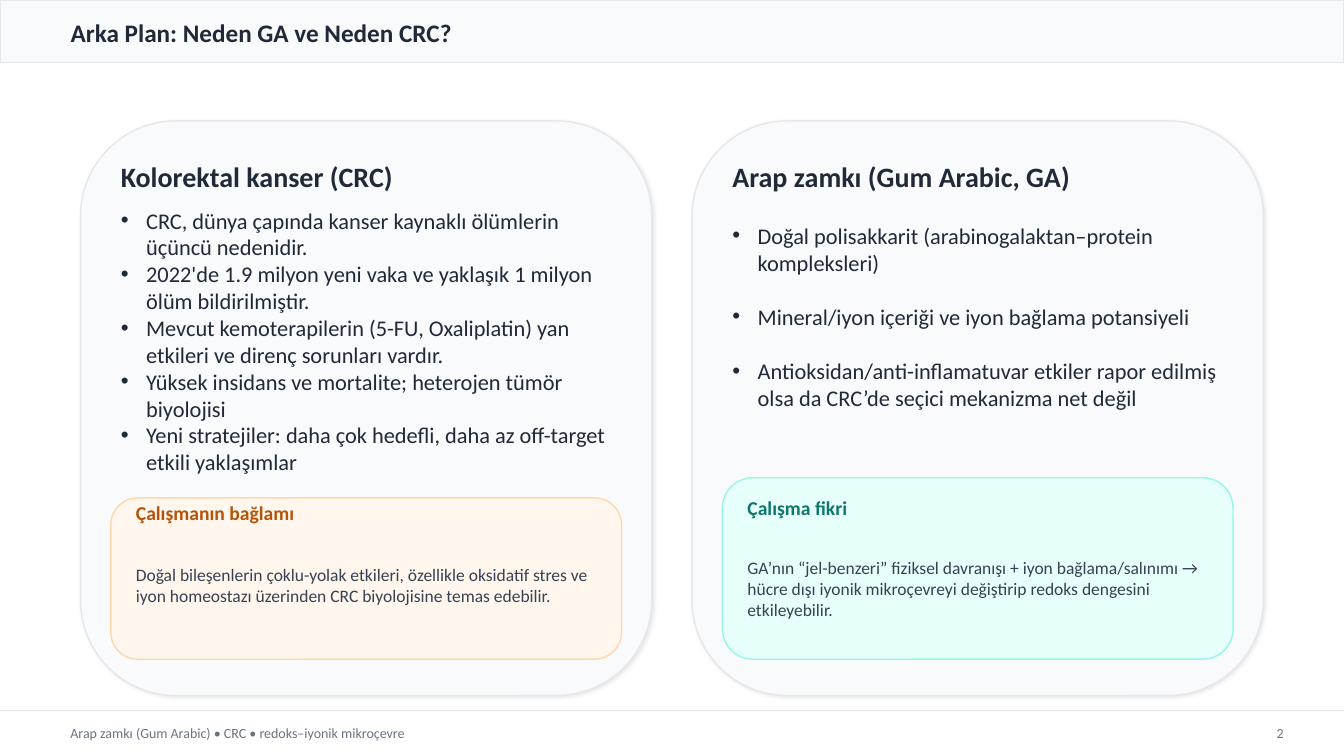
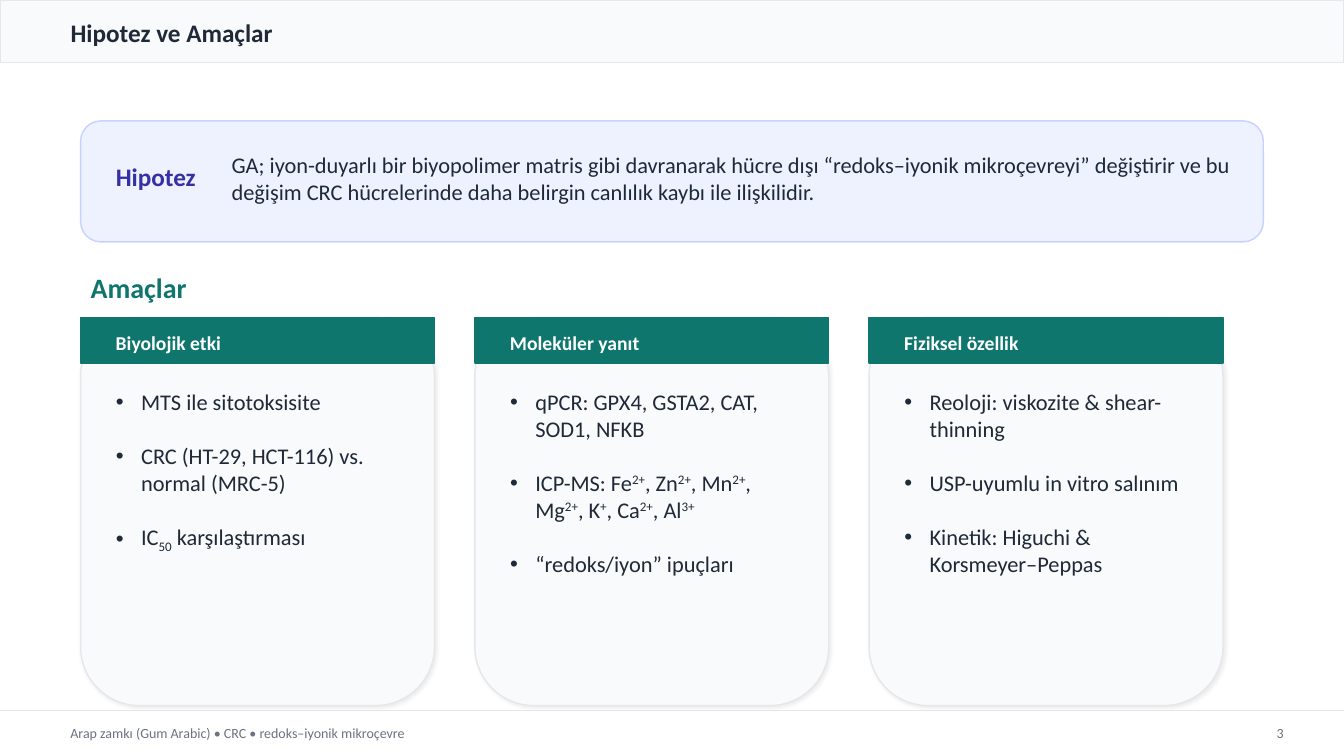
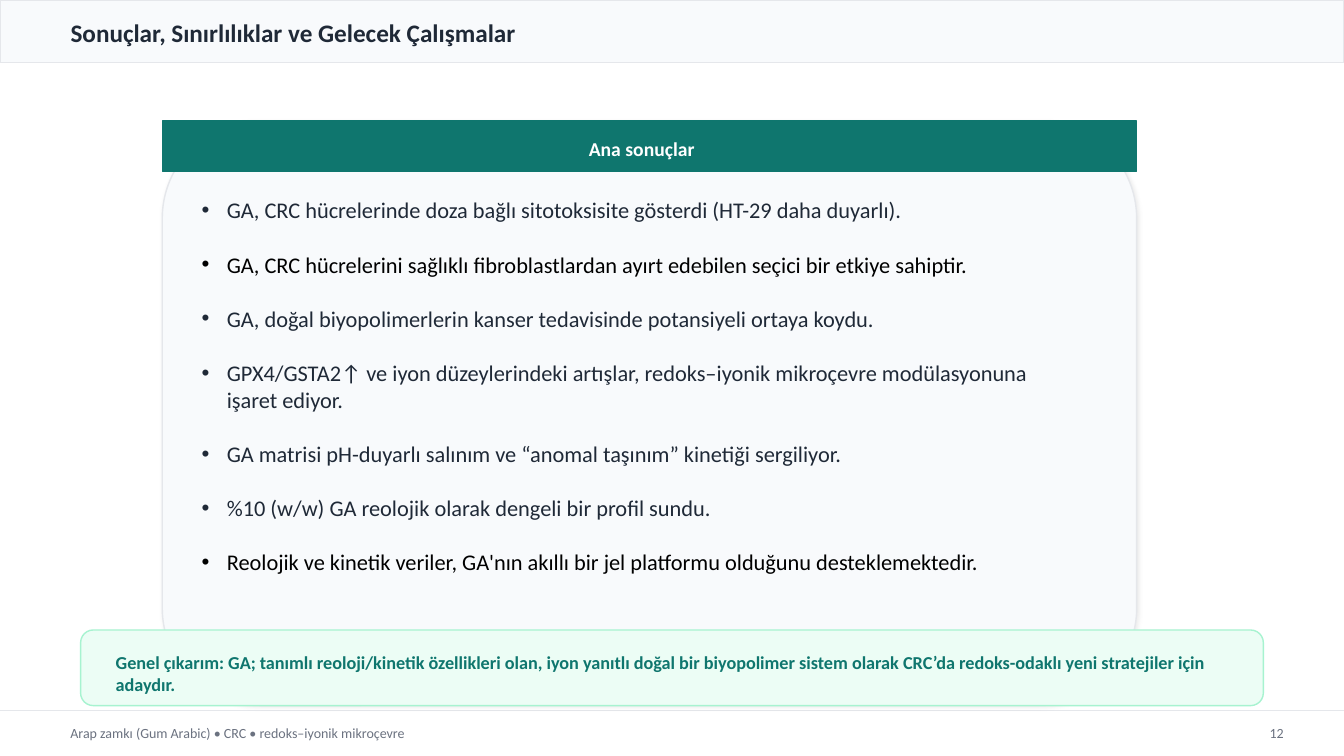
import lxml.etree
import pptx
import pptx.dml.color
import pptx.enum.shapes
import pptx.enum.text
import pptx.oxml.ns
import pptx.util

rgb = pptx.dml.color.RGBColor.from_string
qn = pptx.oxml.ns.qn
ALIGN = pptx.enum.text.PP_ALIGN
ANCHOR = pptx.enum.text.MSO_ANCHOR
SHAPE = pptx.enum.shapes.MSO_SHAPE

INK, MUTED, SLATE = "1F2937", "6B7280", "374151"
PALE, RULE, TEAL, WHITE = "F8FAFC", "E5E7EB", "0F766E", "FFFFFF"
LINE_GAP = 19.5

deck = pptx.Presentation()
deck.slide_width = pptx.util.Inches(13.33)
deck.slide_height = pptx.util.Inches(7.5)
COL = deck.slide_width / 800
ROW = deck.slide_height / 150


def panel(slide, cells, fill, line, outline=SHAPE.ROUNDED_RECTANGLE, shade=None):
    x, y, w, h = cells
    box = slide.shapes.add_shape(outline, int(x * COL), int(y * ROW), int(w * COL), int(h * ROW))
    box.fill.solid()
    box.fill.fore_color.rgb = rgb(fill)
    box.line.color.rgb = rgb(line)
    box.line.width = pptx.util.Pt(1)
    box.shadow.inherit = False
    if shade:
        opacity, distance = shade
        effects = box._element.spPr.find(qn("a:effectLst"))
        shadow = lxml.etree.SubElement(
            effects, qn("a:outerShdw"), blurRad=str(pptx.util.Pt(3)),
            dist=str(pptx.util.Pt(distance)), dir="2700000", algn="bl", rotWithShape="0")
        black = lxml.etree.SubElement(shadow, qn("a:srgbClr"), val="000000")
        lxml.etree.SubElement(black, qn("a:alpha"), val=str(opacity * 1000))


def write(slide, cells, lines, size, color, bold=False, align=ALIGN.LEFT,
          anchor=ANCHOR.MIDDLE, holder=None, bullets=False, gap=0):
    x, y, w, h = cells
    if holder is None:
        holder = slide.shapes.add_textbox(0, 0, 0, 0)
    slide.shapes._spTree.append(holder._element)
    holder.left, holder.top = int(x * COL), int(y * ROW)
    holder.width, holder.height = int(w * COL), int(h * ROW)
    frame = holder.text_frame
    frame.word_wrap = True
    frame.auto_size = pptx.enum.text.MSO_AUTO_SIZE.NONE
    frame.vertical_anchor = anchor
    for i, text in enumerate(lines):
        paragraph = frame.add_paragraph() if i else frame.paragraphs[0]
        for piece in text.split("|"):
            run = paragraph.add_run()
            run.text = piece.lstrip("^_")
            if piece[0] in "^_":
                run.font._element.set("baseline", "30000" if piece[0] == "^" else "-25000")
        paragraph.alignment = align
        paragraph.space_before = pptx.util.Pt(gap if i else 0)
        if bullets:
            properties = paragraph._p.get_or_add_pPr()
            properties.set("marL", str(pptx.util.Inches(0.25)))
            properties.set("indent", str(-pptx.util.Inches(0.25)))
            lxml.etree.SubElement(properties, qn("a:buChar"), char="•")
        paragraph.font.name = "Calibri"
        paragraph.font.size = pptx.util.Pt(size)
        paragraph.font.bold = bold
        paragraph.font.color.rgb = rgb(color)
    return frame


slides = []
for title, number, layout in [
    ("Arka Plan: Neden GA ve Neden CRC?", "2", 3),
    ("Hipotez ve Amaçlar", "3", 4),
    ("Sonuçlar, Sınırlılıklar ve Gelecek Çalışmalar", "12", 1),
]:
    slide = deck.slides.add_slide(deck.slide_layouts[layout])
    slides.append(slide)
    panel(slide, (0, 0, 800, 12.4), PALE, RULE, SHAPE.RECTANGLE)
    write(slide, (36, 2.4, 728, 8), [title], 18, INK, bold=True, holder=slide.shapes.title)
    footer_y = int(141 * ROW)
    footer_rule = slide.shapes.add_connector(
        pptx.enum.shapes.MSO_CONNECTOR.STRAIGHT, 0, footer_y, deck.slide_width, footer_y)
    footer_rule.line.color.rgb = rgb(RULE)
    footer_rule.line.width = pptx.util.Pt(1)
    lxml.etree.SubElement(footer_rule._element.spPr, qn("a:effectLst"))
    write(slide, (36, 142.4, 704, 6),
          ["Arap zamkı (Gum Arabic) • CRC • redoks–iyonik mikroçevre"], 10, MUTED)
    write(slide, (746, 142.4, 24, 6), [number], 10, MUTED, align=ALIGN.RIGHT)

background, aims, conclusions = slides

topics = [
    {
        "heading": "Kolorektal kanser (CRC)",
        "points": [
            "CRC, dünya çapında kanser kaynaklı ölümlerin üçüncü nedenidir.",
            "2022'de 1.9 milyon yeni vaka ve yaklaşık 1 milyon ölüm bildirilmiştir.",
            "Mevcut kemoterapilerin (5-FU, Oxaliplatin) yan etkileri ve direnç sorunları vardır.",
            "Yüksek insidans ve mortalite; heterojen tümör biyolojisi",
            "Yeni stratejiler: daha çok hedefli, daha az off-target etkili yaklaşımlar",
        ],
        "points_rows": (40, 40), "gap": 0,
        "note": "Çalışmanın bağlamı",
        "detail": "Doğal bileşenlerin çoklu-yolak etkileri, özellikle oksidatif stres ve "
                  "iyon homeostazı üzerinden CRC biyolojisine temas edebilir.",
        "note_rows": (98.8, 32), "label_row": 98.8, "detail_rows": (102, 28),
        "colors": ("FFF7ED", "FED7AA", "B45309"),
    },
    {
        "heading": "Arap zamkı (Gum Arabic, GA)",
        "points": [
            "Doğal polisakkarit (arabinogalaktan–protein kompleksleri)",
            "Mineral/iyon içeriği ve iyon bağlama potansiyeli",
            "Antioksidan/anti-inflamatuvar etkiler rapor edilmiş olsa da CRC’de seçici "
            "mekanizma net değil",
        ],
        "points_rows": (43, 45), "gap": LINE_GAP,
        "note": "Çalışma fikri",
        "detail": "GA’nın “jel-benzeri” fiziksel davranışı + iyon bağlama/salınımı → hücre dışı "
                  "iyonik mikroçevreyi değiştirip redoks dengesini etkileyebilir.",
        "note_rows": (94.8, 36), "label_row": 97.8, "detail_rows": (104.8, 24),
        "colors": ("E6FFFB", "99F6E4", TEAL),
    },
]
for i, topic in enumerate(topics):
    x = 48 + i * (340 + 24)
    fill, edge, accent = topic["colors"]
    top, height = topic["points_rows"]
    panel(background, (x, 24, 340, 114), PALE, RULE, shade=(10, 1.5))
    write(background, (x + 18, 31, 304, 8), [topic["heading"]], 20, INK, bold=True)
    write(background, (x + 18, top, 304, height), topic["points"], 16, INK, anchor=ANCHOR.TOP,
          holder=background.placeholders[i + 1], bullets=True, gap=topic["gap"])
    top, height = topic["note_rows"]
    panel(background, (x + 18, top, 304, height), fill, edge)
    write(background, (x + 27, topic["label_row"], 286, 6), [topic["note"]], 14, accent, bold=True)
    top, height = topic["detail_rows"]
    write(background, (x + 27, top, 286, height), [topic["detail"]], 12.5, SLATE)

panel(aims, (48, 24, 704, 24), "EEF2FF", "C7D2FE")
write(aims, (63, 31, 120, 8), ["Hipotez"], 18, "3730A3", bold=True)
write(aims, (132, 26.4, 620, 18), [
    "GA; iyon-duyarlı bir biyopolimer matris gibi davranarak hücre dışı “redoks–iyonik "
    "mikroçevreyi” değiştirir ve bu değişim CRC hücrelerinde daha belirgin canlılık kaybı ile "
    "ilişkilidir."], 16, INK)
write(aims, (48, 53, 704, 8), ["Amaçlar"], 20, TEAL, bold=True)

aim_width = (704 - 3 * 24) / 3
aim_lists = list(aims.placeholders)[1:4]
for i, (heading, points) in enumerate([
    ("Biyolojik etki", [
        "MTS ile sitotoksisite",
        "CRC (HT-29, HCT-116) vs. normal (MRC-5)",
        "IC|_50| karşılaştırması"]),
    ("Moleküler yanıt", [
        "qPCR: GPX4, GSTA2, CAT, SOD1, NFKB",
        "ICP-MS: Fe|^2+|, Zn|^2+|, Mn|^2+|, Mg|^2+|, K|^+|, Ca|^2+|, Al|^3+",
        "“redoks/iyon” ipuçları"]),
    ("Fiziksel özellik", [
        "Reoloji: viskozite & shear-thinning",
        "USP-uyumlu in vitro salınım",
        "Kinetik: Higuchi & Korsmeyer–Peppas"]),
]):
    x = 48 + i * (aim_width + 24)
    panel(aims, (x, 63, aim_width, 77), PALE, RULE, shade=(8, 1.2))
    panel(aims, (x, 63, aim_width, 9), TEAL, TEAL, SHAPE.RECTANGLE)
    write(aims, (x + 15, 65, aim_width - 30, 6), [heading], 14, WHITE, bold=True)
    write(aims, (x + 15, 76, aim_width - 30, 62), points, 16, INK, anchor=ANCHOR.TOP,
          holder=aim_lists[i], bullets=True, gap=LINE_GAP)

panel(conclusions, (96.6, 24, 580, 116), PALE, RULE, shade=(8, 1.2))
panel(conclusions, (96.6, 24, 580, 10), TEAL, TEAL, SHAPE.RECTANGLE)
write(conclusions, (192, 26.4, 380, 6), ["Ana sonuçlar"], 14, WHITE, bold=True, align=ALIGN.CENTER)
findings = write(conclusions, (114, 38, 513, 100), [
    "GA, CRC hücrelerinde doza bağlı sitotoksisite gösterdi (HT-29 daha duyarlı).",
    "GA, CRC hücrelerini sağlıklı fibroblastlardan ayırt edebilen seçici bir etkiye sahiptir.",
    "GA, doğal biyopolimerlerin kanser tedavisinde potansiyeli ortaya koydu.",
    "GPX4/GSTA2↑ ve iyon düzeylerindeki artışlar, redoks–iyonik mikroçevre modülasyonuna "
    "işaret ediyor.",
    "GA matrisi pH-duyarlı salınım ve “anomal taşınım” kinetiği sergiliyor.",
    "%10 (w/w) GA reolojik olarak dengeli bir profil sundu.",
    "Reolojik ve kinetik veriler, GA'nın akıllı bir jel platformu olduğunu desteklemektedir.",
], 16, INK, anchor=ANCHOR.TOP, holder=conclusions.placeholders[1], bullets=True, gap=LINE_GAP)
for key_finding in (1, 6):
    findings.paragraphs[key_finding].font.color.rgb = rgb("000000")
panel(conclusions, (48, 125, 704, 15), "ECFDF5", "A7F3D0")
write(conclusions, (63, 127.6, 674, 12), [
    "Genel çıkarım: GA; tanımlı reoloji/kinetik özellikleri olan, iyon yanıtlı doğal bir "
    "biyopolimer sistem olarak CRC’da redoks-odaklı yeni stratejiler için adaydır."],
    13, TEAL, bold=True)

for slide in slides:
    for holder in list(slide.placeholders):
        if not holder.text_frame.text:
            holder._element.getparent().remove(holder._element)

deck.save("out.pptx")
